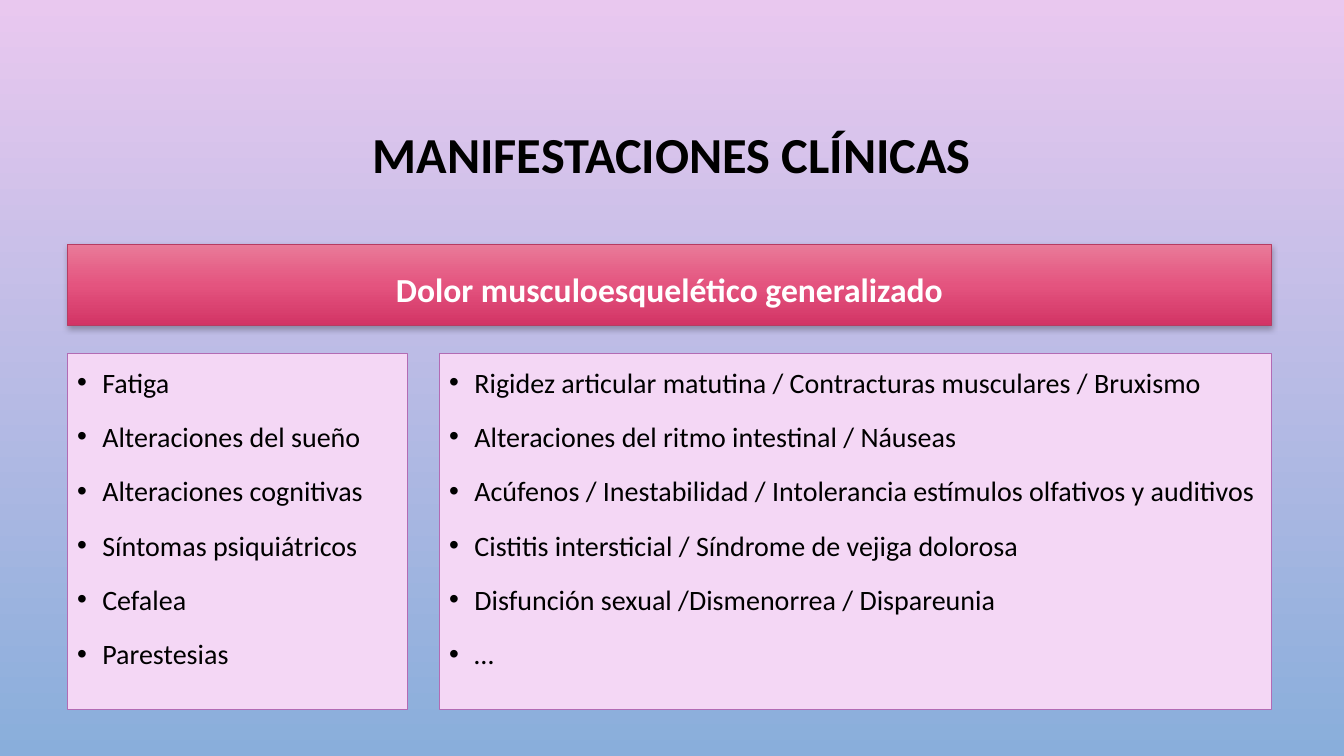
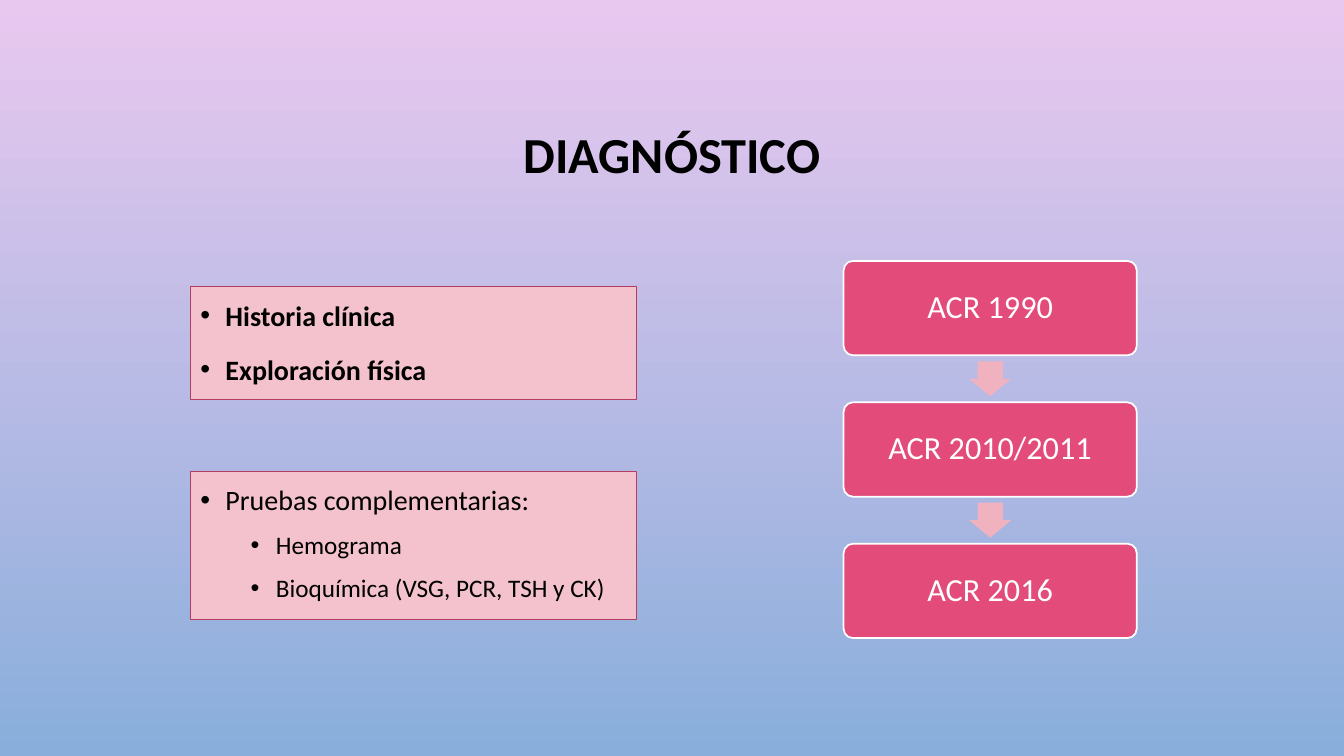
from copy import deepcopy
from dataclasses import dataclass

from lxml.etree import SubElement
from pptx import Presentation
from pptx.dml.color import RGBColor as Rgb
from pptx.enum.shapes import MSO_SHAPE as Shape
from pptx.enum.text import MSO_ANCHOR as Anchor, PP_ALIGN as Align
from pptx.oxml.ns import qn
from pptx.util import Pt


@dataclass(frozen=True)
class Theme:
    font: str = "Calibri"
    ink: str = "000000"
    white: str = "FFFFFF"
    background: tuple = ("E9C8EF", "89AEDB")
    banner: tuple = ("E97B99", "E4547F", "D23465")
    rose_line: str = "B63C62"
    lilac: tuple = ("F4D7F5", "B26BB4")
    rose: tuple = ("F4C2CD", "B63C62")
    step: str = "E34B7A"
    arrow: str = "EFB2BE"
    title_size: int = 36
    banner_size: int = 24
    step_size: int = 23
    list_sizes: tuple = (20, 18)
    list_gaps: tuple = (10, 5)
    list_indents: tuple = (18, 54)
    thin: float = 0.75
    thick: float = 1.25


def set_gradient(fill, colors):
    """Fill from top to bottom with evenly spaced colours."""
    fill.gradient()
    fill.gradient_angle = 270
    first_stop = fill.gradient_stops[0]._gs
    for _ in colors[2:]:
        first_stop.addnext(deepcopy(first_stop))
    for index, (stop, color) in enumerate(zip(fill.gradient_stops, colors)):
        stop.position = index / (len(colors) - 1)
        stop.color.rgb = Rgb.from_string(color)


def add_soft_shadow(shape):
    effects = shape._element.spPr.find(qn("a:effectLst"))
    shadow = SubElement(effects, qn("a:outerShdw"), blurRad=str(Pt(4)),
                        dist=str(Pt(2)), dir="5400000", rotWithShape="0")
    color = SubElement(shadow, qn("a:srgbClr"), val="000000")
    SubElement(color, qn("a:alpha"), val="28000")


class Deck:
    def __init__(self, theme):
        self.theme = theme
        self.prs = Presentation()
        self.prs.slide_width, self.prs.slide_height = Pt(960), Pt(540)
        set_gradient(self.prs.slide_master.background.fill, theme.background)
        self.slide = None

    def format_paragraph(self, paragraph, size, color, bold=False,
                         align=Align.CENTER, spacing=0.9):
        paragraph.alignment = align
        paragraph.line_spacing = spacing
        for run in paragraph.runs:
            run.font.name = self.theme.font
            run.font.size = Pt(size)
            run.font.bold = bold
            run.font.color.rgb = Rgb.from_string(color)

    def new_slide(self, text):
        self.slide = self.prs.slides.add_slide(self.prs.slide_layouts[5])
        title = self.slide.shapes.title
        title.left, title.top, title.width, title.height = (
            Pt(72), Pt(49), Pt(816), Pt(126))
        title.text_frame.text = text
        title.text_frame.vertical_anchor = Anchor.MIDDLE
        self.format_paragraph(title.text_frame.paragraphs[0],
                              self.theme.title_size, self.theme.ink, bold=True)

    def block(self, kind, box, fill, line=None, line_width=0):
        """Add a preset shape; a tuple of colours makes a gradient fill."""
        shape = self.slide.shapes.add_shape(kind, *map(Pt, box))
        shape.shadow.inherit = False
        if isinstance(fill, tuple):
            set_gradient(shape.fill, fill)
        else:
            shape.fill.solid()
            shape.fill.fore_color.rgb = Rgb.from_string(fill)
        if line:
            shape.line.color.rgb = Rgb.from_string(line)
            shape.line.width = Pt(line_width)
        else:
            shape.line.fill.background()
        return shape

    def banner(self, box, text):
        theme = self.theme
        banner = self.block(Shape.RECTANGLE, box, theme.banner,
                            theme.rose_line, theme.thin)
        add_soft_shadow(banner)
        banner.text_frame.text = text
        self.format_paragraph(banner.text_frame.paragraphs[0],
                              theme.banner_size, theme.white, True, spacing=1.2)

    def bullet(self, paragraph, level):
        paragraph.level = level
        props = paragraph._p.get_or_add_pPr()
        props.set("marL", str(Pt(self.theme.list_indents[level])))
        props.set("indent", str(Pt(-18)))
        color = SubElement(props, qn("a:buClr"))
        SubElement(color, qn("a:srgbClr"), val=self.theme.ink)
        SubElement(props, qn("a:buFont"), typeface="Arial")
        SubElement(props, qn("a:buChar"), char="•")

    def list_panel(self, box, colors, items, subitems=(), bold=False,
                   align=Align.JUSTIFY):
        theme = self.theme
        panel = self.block(Shape.RECTANGLE, box, *colors, theme.thin)
        frame = panel.text_frame
        frame.vertical_anchor = Anchor.TOP
        frame.text = "\n".join([*items, *subitems])
        for index, paragraph in enumerate(frame.paragraphs):
            level = int(index >= len(items))
            self.bullet(paragraph, level)
            self.format_paragraph(paragraph, theme.list_sizes[level],
                                  theme.ink, bold, align, spacing=1.2)
            if index:
                paragraph.space_before = Pt(theme.list_gaps[level])

    def step_chain(self, left, top, width, height, gap, steps):
        """Stack rounded boxes with a down arrow centred in every gap."""
        theme = self.theme
        arrow_width, arrow_height = 30, 25
        for index, text in enumerate(steps):
            step_top = top + index * (height + gap)
            step = self.block(Shape.ROUNDED_RECTANGLE,
                              (left, step_top, width, height),
                              theme.step, theme.white, theme.thick)
            step.adjustments[0] = 0.1
            step.text_frame.text = text
            self.format_paragraph(step.text_frame.paragraphs[0],
                                  theme.step_size, theme.white)
            if index:
                arrow = self.block(
                    Shape.DOWN_ARROW,
                    (left + (width - arrow_width) / 2,
                     step_top - (gap + arrow_height) / 2,
                     arrow_width, arrow_height),
                    theme.arrow)
                arrow.adjustments[0], arrow.adjustments[1] = 0.6, 0.5


def add_manifestations(deck):
    deck.new_slide("MANIFESTACIONES CLÍNICAS")
    deck.banner((48, 174.4, 860.4, 58), "Dolor musculoesquelético generalizado")
    panel_top, panel_height = 252.4, 254.4
    deck.list_panel((48, panel_top, 243, panel_height), deck.theme.lilac, [
        "Fatiga",
        "Alteraciones del sueño",
        "Alteraciones cognitivas",
        "Síntomas psiquiátricos",
        "Cefalea",
        "Parestesias",
    ])
    deck.list_panel((313.8, panel_top, 594.6, panel_height), deck.theme.lilac, [
        "Rigidez articular matutina / Contracturas musculares / Bruxismo",
        "Alteraciones del ritmo intestinal / Náuseas",
        "Acúfenos / Inestabilidad / Intolerancia estímulos olfativos y auditivos",
        "Cistitis intersticial / Síndrome de vejiga dolorosa",
        "Disfunción sexual /Dismenorrea / Dispareunia",
        "…",
    ])


def add_diagnosis(deck):
    deck.new_slide("DIAGNÓSTICO")
    panel_left, panel_width = 136, 319
    deck.list_panel((panel_left, 204.6, panel_width, 80.6), deck.theme.rose,
                    ["Historia clínica", "Exploración física"], bold=True)
    deck.list_panel((panel_left, 336.6, panel_width, 105.8), deck.theme.rose,
                    ["Pruebas complementarias:"],
                    ["Hemograma", "Bioquímica (VSG, PCR, TSH y CK)"],
                    align=Align.LEFT)
    deck.step_chain(602.6, 186.4, 209.4, 67.4, 33.6,
                    ["ACR 1990", "ACR 2010/2011", "ACR 2016"])


def main():
    deck = Deck(Theme())
    add_manifestations(deck)
    add_diagnosis(deck)
    deck.prs.save("out.pptx")


if __name__ == "__main__":
    main()
